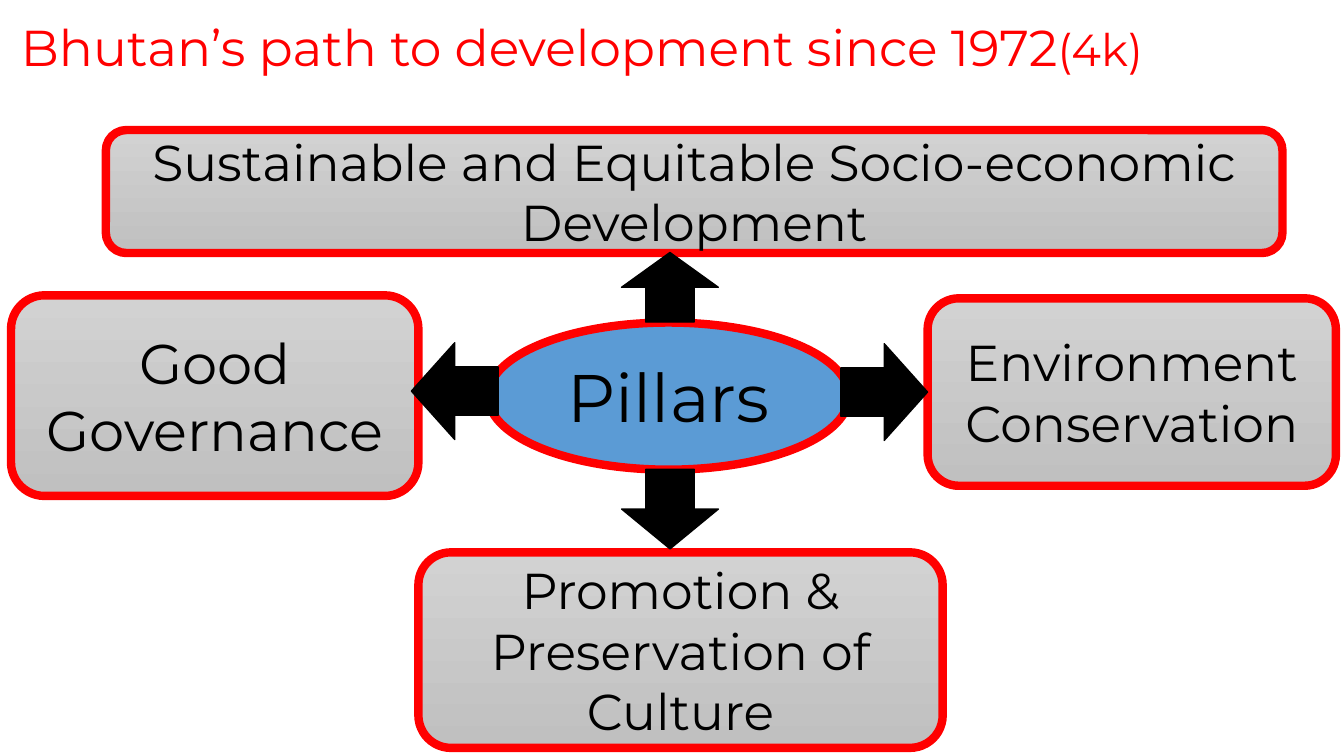
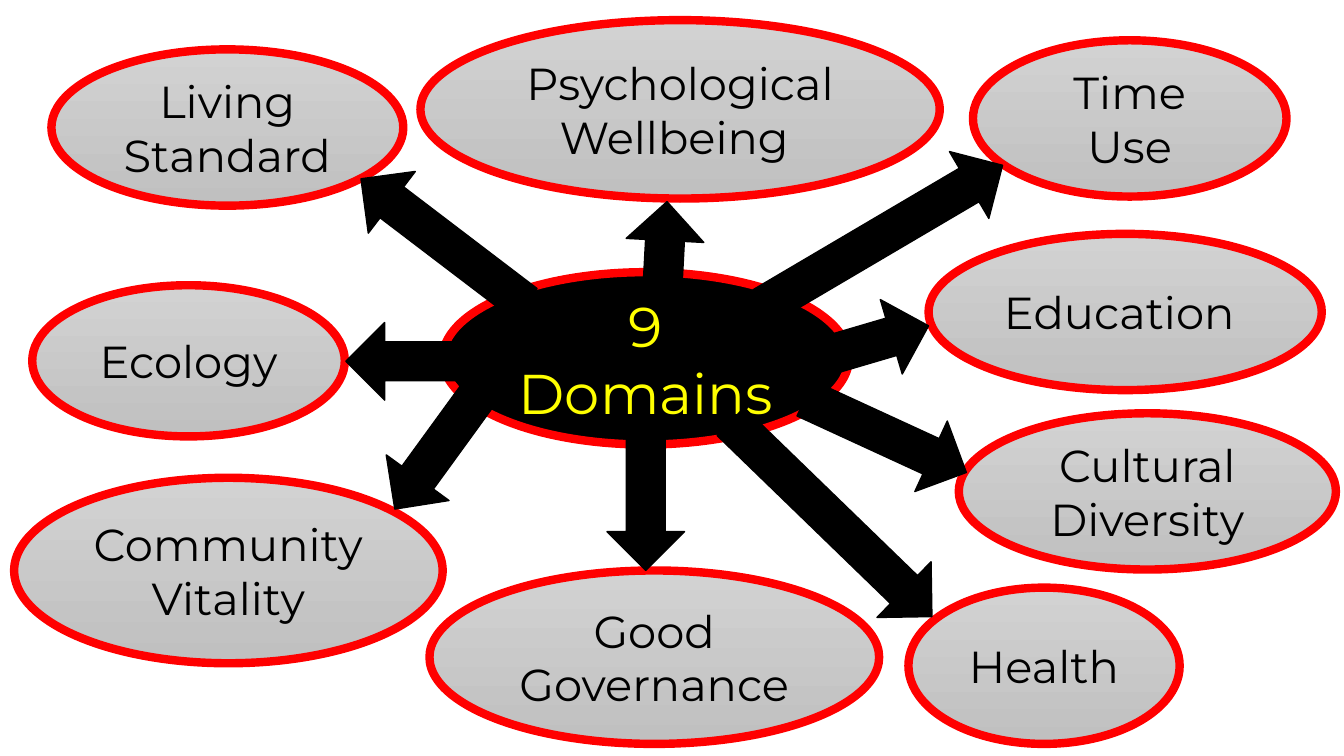
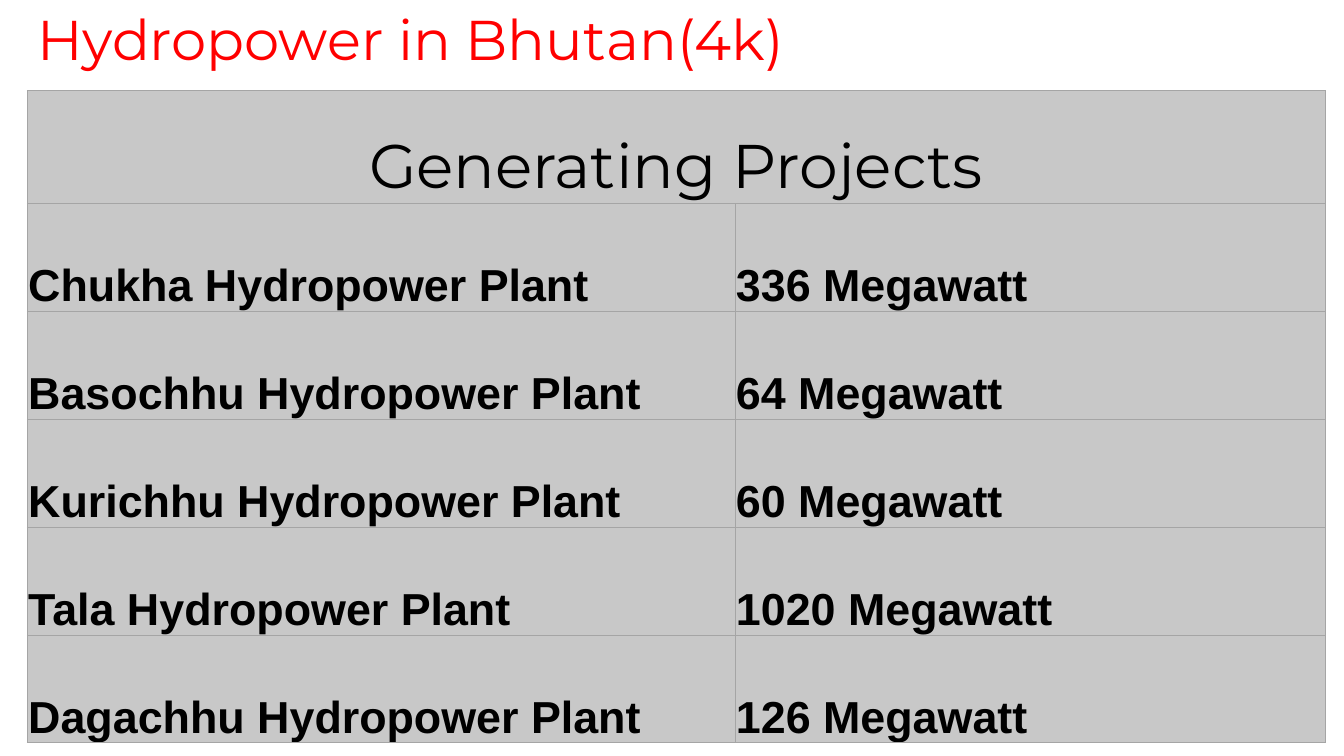
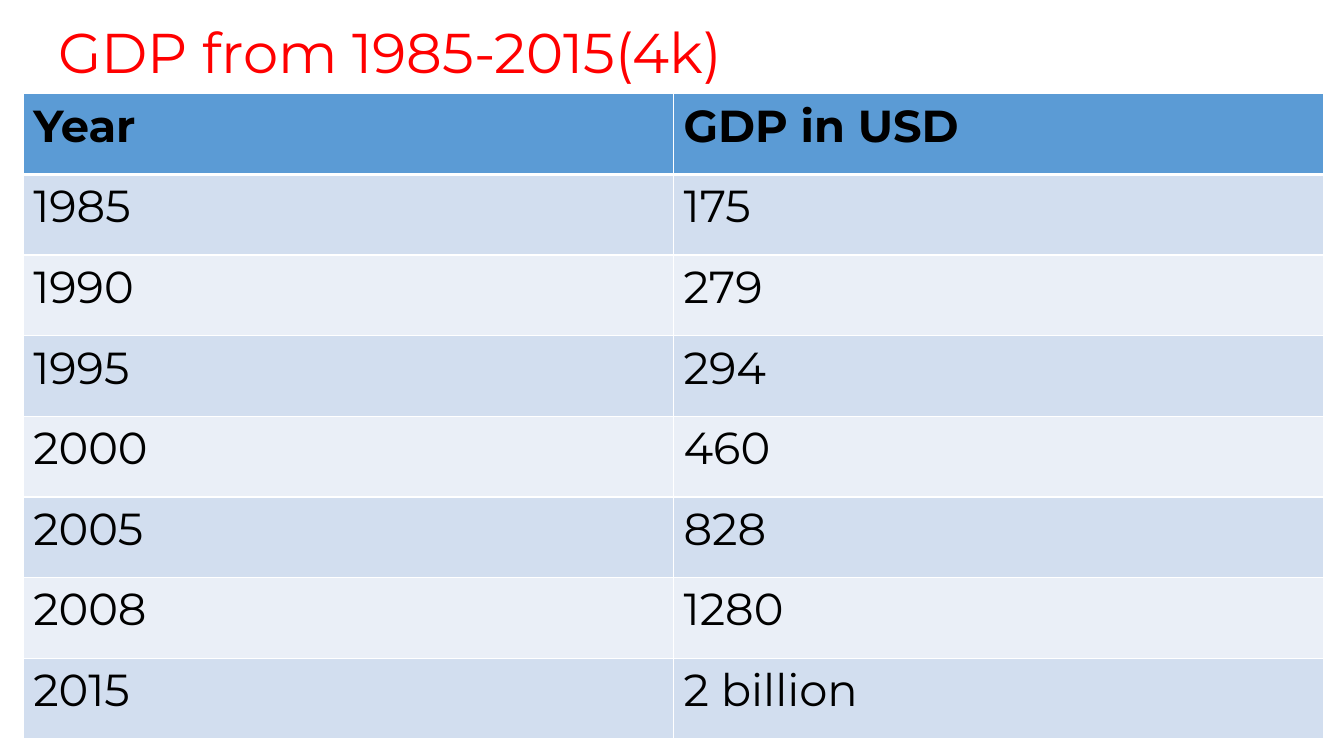
from lxml.etree import SubElement
from pptx import Presentation
from pptx.dml.color import RGBColor
from pptx.enum.shapes import MSO_SHAPE as Shape
from pptx.enum.text import MSO_ANCHOR as Anchor, MSO_AUTO_SIZE as AutoSize, PP_ALIGN as Align
from pptx.oxml.ns import qn
from pptx.util import Inches, Pt

# Shared look
RED = RGBColor(0xFF, 0x00, 0x00)
BLACK = RGBColor(0x00, 0x00, 0x00)
WHITE = RGBColor(0xFF, 0xFF, 0xFF)
YELLOW = RGBColor(0xFF, 0xFF, 0x00)
BLUE = RGBColor(0x5B, 0x9B, 0xD5)
BAND_DARK = RGBColor(0xD2, 0xDE, 0xEF)
BAND_LIGHT = RGBColor(0xEA, 0xEF, 0xF7)
GREY_TOP = RGBColor(0xD2, 0xD2, 0xD2)
GREY = RGBColor(0xC8, 0xC8, 0xC8)
GREY_BOTTOM = RGBColor(0xC0, 0xC0, 0xC0)
GRID = RGBColor(0xA5, 0xA5, 0xA5)
FONT = "Montserrat"

# Slide content: text, size, left, top, width, height
PILLARS = [
    ("Environment Conservation", 36, 9.2, 2.96, 4.05, 1.86),
    ("Good Governance", 40, 0.11, 2.93, 4.04, 1.99),
    ("Promotion & Preservation of Culture", 36, 4.15, 5.48, 5.2, 1.94),
    ("Sustainable and Equitable Socio-economic Development", 36, 1.05, 1.29, 11.67, 1.22),
]
# Arrows: left, top, width, height, rotation
PILLAR_ARROWS = [
    (6.3, 2.37, 0.69, 0.96, 270),
    (6.25, 4.57, 0.79, 0.96, 90),
    (8.34, 3.41, 0.86, 0.96, 0),
    (4.08, 3.4, 0.86, 0.96, 180),
]
DOMAINS = [
    ("Health", 9.01, 5.83, 2.69, 1.55),
    ("Psychological Wellbeing ", 4.17, 0.2, 5.15, 1.77),
    ("Time Use", 9.65, 0.4, 3.11, 1.55),
    ("Education ", 9.21, 2.32, 3.9, 1.55),
    ("Cultural Diversity", 9.51, 4.1, 3.74, 1.55),
    ("Good Governance", 4.26, 5.66, 4.46, 1.72),
    ("Community Vitality", 0.14, 4.74, 4.25, 1.84),
    ("Ecology", 0.32, 2.83, 3.1, 1.5),
    ("Living Standard", 0.51, 0.49, 3.49, 1.55),
]
# Arrows of one width: left, top, length, rotation
DOMAIN_ARROW_WIDTH = 0.77
DOMAIN_ARROWS = [
    (4.01, 1.37, 2.05, 127.3),
    (6.21, 2, 0.77, 183),
    (8.34, 2.87, 1.01, 253.6),
    (3.61, 3.02, 1.13, 90),
    (7.86, 3.76, 2.78, 314.1),
    (3.96, 3.73, 1.46, 36),
    (6.02, 4.33, 1.33, 0),
    (8.37, 0.96, 2.76, 239.5),
    (8.4, 3.44, 1.76, 294.7),
]
PLANTS = [
    ("Chukha", 336),
    ("Basochhu", 64),
    ("Kurichhu", 60),
    ("Tala", 1020),
    ("Dagachhu", 126),
]
GDP = [
    ("Year", "GDP in USD"),
    ("1985", "175"),
    ("1990", "279"),
    ("1995", "294"),
    ("2000", "460"),
    ("2005", "828"),
    ("2008", "1280"),
    ("2015", "2 billion"),
]


def add_page(deck):
    return deck.slides.add_slide(deck.slide_layouts[6])


def add_span(para, text, size, color=BLACK, font=FONT, bold=False):
    span = para.add_run()
    span.text = text
    span.font.size = Pt(size)
    span.font.name = font
    span.font.bold = bold
    span.font.color.rgb = color


def add_title(page, place, *spans):
    box = page.shapes.add_textbox(*map(Inches, place))
    frame = box.text_frame
    frame.word_wrap = True
    frame.auto_size = AutoSize.SHAPE_TO_FIT_TEXT
    for text, size in spans:
        add_span(frame.paragraphs[0], text, size, RED)


def add_plain_shape(page, kind, place, line_color, line_width):
    shape = page.shapes.add_shape(kind, *map(Inches, place))
    shape.shadow.inherit = False
    shape.line.color.rgb = line_color
    shape.line.width = Pt(line_width)
    return shape


def add_bubble(page, kind, place, text, size, fill=None, color=BLACK):
    """Red-edged shape with centred text; grey gradient unless a fill is given."""
    bubble = add_plain_shape(page, kind, place, RED, 6)
    if fill is None:
        bubble.fill.gradient()
        bubble.fill.gradient_angle = 270
        for stop, shade in zip(bubble.fill.gradient_stops, (GREY_TOP, GREY_BOTTOM)):
            stop.color.rgb = shade
    else:
        bubble.fill.solid()
        bubble.fill.fore_color.rgb = fill
    frame = bubble.text_frame
    frame.word_wrap = True
    frame.vertical_anchor = Anchor.MIDDLE
    para = frame.paragraphs[0]
    para.alignment = Align.CENTER
    add_span(para, text, size, color)


def add_arrow(page, kind, place, rotation):
    arrow = add_plain_shape(page, kind, place, BLACK, 1)
    arrow.fill.solid()
    arrow.fill.fore_color.rgb = BLACK
    arrow.rotation = rotation


def add_grid(page, left, top, widths, heights):
    frame = page.shapes.add_table(len(heights), len(widths), Inches(left), Inches(top),
                                  Inches(sum(widths)), Inches(sum(heights)))
    table = frame.table
    for column, width in zip(table.columns, widths):
        column.width = Inches(width)
    for row, height in zip(table.rows, heights):
        row.height = Inches(height)
    return table


def style_cell(cell, fill, border, width, top=None, bottom=None):
    """Draw the four borders, then fill the cell."""
    properties = cell._tc.get_or_add_tcPr()
    sides = {"a:lnL": width, "a:lnR": width, "a:lnT": top or width, "a:lnB": bottom or width}
    for tag, points in sides.items():
        line = SubElement(properties, qn(tag), w=str(Pt(points)))
        SubElement(SubElement(line, qn("a:solidFill")), qn("a:srgbClr"), val=str(border))
    cell.fill.solid()
    cell.fill.fore_color.rgb = fill


def build_pillars(deck):
    page = add_page(deck)
    add_bubble(page, Shape.OVAL, (4.84, 3.2, 3.58, 1.46), "Pillars", 48, BLUE)
    for text, size, *place in PILLARS:
        add_bubble(page, Shape.ROUNDED_RECTANGLE, place, text, size)
    for *place, rotation in PILLAR_ARROWS:
        add_arrow(page, Shape.RIGHT_ARROW, place, rotation)
    add_title(page, (0.11, 0.11, 12.9, 0.71),
              ("Bhutan’s path to development since 1972", 36), ("(4k)", 32))


def build_domains(deck):
    page = add_page(deck)
    add_bubble(page, Shape.OVAL, (4.39, 2.7, 4.03, 1.71), "9 Domains", 40, BLACK, YELLOW)
    for text, *place in DOMAINS:
        add_bubble(page, Shape.OVAL, place, text, 32)
    for left, top, length, rotation in DOMAIN_ARROWS:
        add_arrow(page, Shape.DOWN_ARROW, (left, top, DOMAIN_ARROW_WIDTH, length), rotation)


def build_hydropower(deck):
    page = add_page(deck)
    table = add_grid(page, 0.27, 0.9, (7.02, 5.85), [1.12] + [1.07] * len(PLANTS))
    for cell in table.iter_cells():
        style_cell(cell, GREY, GRID, 0.5)
        cell.vertical_anchor = Anchor.BOTTOM
        cell.margin_left = cell.margin_right = cell.margin_top = Inches(0.01)
        cell.margin_bottom = 0
    # Heading across both columns
    heading = table.cell(0, 0)
    heading.merge(table.cell(0, 1))
    para = heading.text_frame.paragraphs[0]
    para.alignment = Align.CENTER
    add_span(para, "Generating Projects", 44)
    # One row per plant
    for row, (plant, power) in enumerate(PLANTS, 1):
        for column, text in enumerate((f"{plant} Hydropower Plant", f"{power} Megawatt")):
            para = table.cell(row, column).text_frame.paragraphs[0]
            add_span(para, text, 32, font="Arial", bold=True)
    add_title(page, (0.27, 0, 11.5, 0.77), ("Hydropower in Bhutan(4k)", 40))


def build_gdp(deck):
    page = add_page(deck)
    table = add_grid(page, 0.23, 0.93, (6.45, 6.45), [0.8] * len(GDP))
    for row, texts in enumerate(GDP):
        is_header = row == 0
        fill = BLUE if is_header else (BAND_LIGHT, BAND_DARK)[row % 2]
        for column, text in enumerate(texts):
            cell = table.cell(row, column)
            style_cell(cell, fill, WHITE, 1, top=3 if row == 1 else 1,
                       bottom=3 if is_header else 1)
            add_span(cell.text_frame.paragraphs[0], text, 32, bold=is_header)
    add_title(page, (0.48, 0.12, 10.12, 0.77), ("GDP from 1985-2015(4k)", 40))


def main():
    deck = Presentation()
    deck.slide_width = Inches(13.33)
    deck.slide_height = Inches(7.5)
    for build in (build_pillars, build_domains, build_hydropower, build_gdp):
        build(deck)
    deck.save("out.pptx")


if __name__ == "__main__":
    main()
